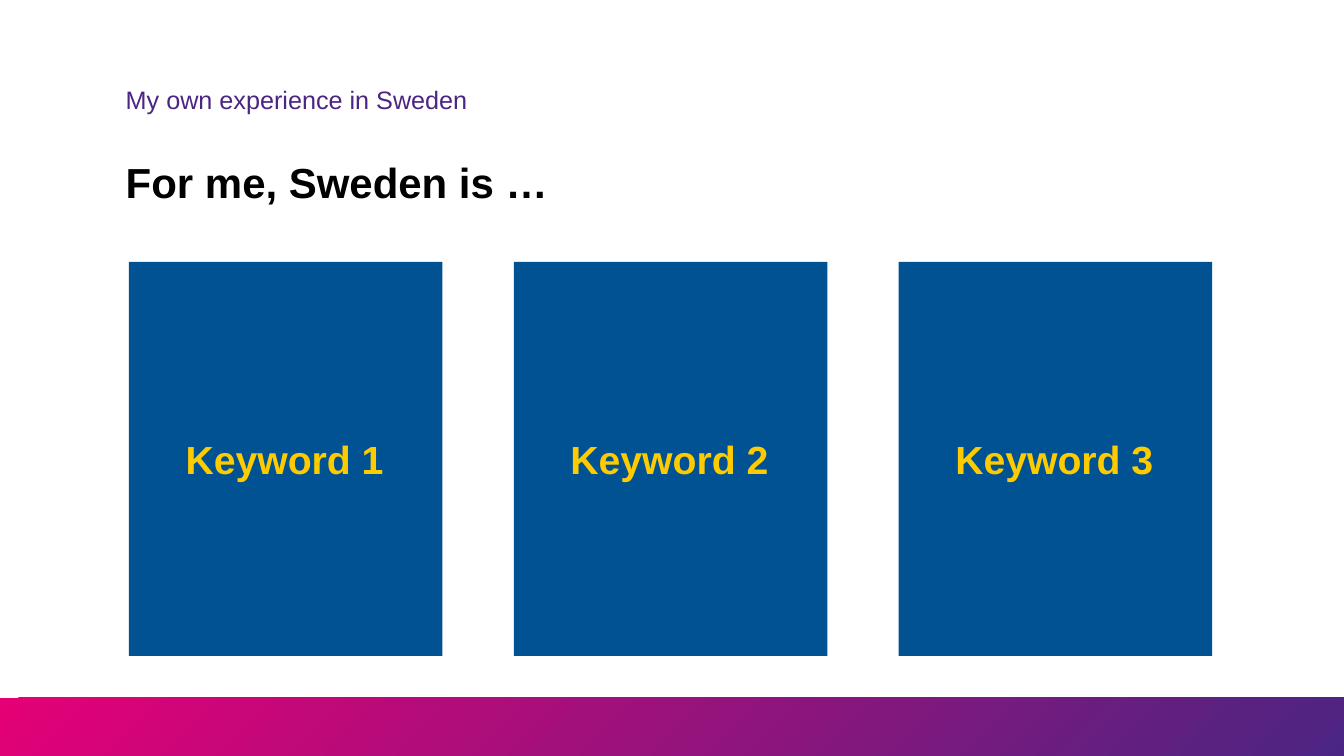
from pptx import Presentation
from pptx.dml.color import RGBColor
from pptx.enum.shapes import MSO_SHAPE
from pptx.enum.text import MSO_ANCHOR, PP_ALIGN
from pptx.util import Cm, Pt

PINK = RGBColor(0xE5, 0x00, 0x76)
PURPLE = RGBColor(0x4B, 0x25, 0x82)
BLUE = RGBColor(0x00, 0x52, 0x93)
YELLOW = RGBColor(0xFE, 0xCB, 0x00)
BLACK = RGBColor(0x00, 0x00, 0x00)


def add_text(shapes, text, left, top, width, height, *, size, color, bold=False,
             align=PP_ALIGN.LEFT, anchor=MSO_ANCHOR.TOP, spacing=1.0):
    """Add a wrapping text box holding one formatted paragraph."""
    box = shapes.add_textbox(left, top, width, height)
    frame = box.text_frame
    frame.word_wrap = True
    frame.vertical_anchor = anchor
    para = frame.paragraphs[0]
    para.alignment = align
    para.line_spacing = spacing
    span = para.add_run()
    span.text = text
    span.font.name = "Arial"
    span.font.size = Pt(size)
    span.font.bold = bold
    span.font.color.rgb = color


def add_rectangle(shapes, left, top, width, height):
    """Add a rectangle without outline or shadow and return it."""
    rectangle = shapes.add_shape(MSO_SHAPE.RECTANGLE, left, top, width, height)
    rectangle.shadow.inherit = False
    rectangle.line.fill.background()
    return rectangle


def add_footer_band(page, left, top, width, height):
    """Draw the diagonal gradient band at the foot of the page."""
    fill = add_rectangle(page.shapes, left, top, width, height).fill
    fill.gradient()
    fill.gradient_angle = 315
    for stop, color in zip(fill.gradient_stops, (PINK, PURPLE)):
        stop.color.rgb = color


def add_heading(page, left, top, width, topic, title):
    """Place the topic line and the title below it."""
    add_text(page.shapes, topic, left, top, width, Cm(1.55), size=18,
             color=PURPLE, anchor=MSO_ANCHOR.BOTTOM, spacing=0.9)
    add_text(page.shapes, title, left, top + Cm(1.75), width, Cm(2.9), size=30,
             color=BLACK, bold=True, anchor=MSO_ANCHOR.MIDDLE, spacing=0.9)


def add_keyword_card(page, left, top, width, height, keyword):
    """Group a blue card with its centred keyword."""
    shapes = page.shapes.add_group_shape().shapes
    card = add_rectangle(shapes, left, top, width, height)
    card.fill.solid()
    card.fill.fore_color.rgb = BLUE
    inset = Cm(0.45)
    add_text(shapes, keyword, left + inset - Cm(0.03), top + Cm(4.24),
             width - 2 * inset, Cm(2.18), size=28, color=YELLOW, bold=True,
             align=PP_ALIGN.CENTER)


def add_keyword_row(page, left, top, width, height, keywords):
    """Spread one card per keyword evenly over the row."""
    gap = Cm(1.8)
    card_width = (width - gap * (len(keywords) - 1)) // len(keywords)
    for index, keyword in enumerate(keywords):
        add_keyword_card(page, left + index * (card_width + gap), top,
                         card_width, height, keyword)


def main():
    """Build the keyword slide and save it."""
    deck = Presentation()
    deck.slide_width, deck.slide_height = Cm(33.87), Cm(19.05)
    page = deck.slides.add_slide(deck.slide_layouts[6])
    band_height = Cm(1.47)
    add_footer_band(page, 0, deck.slide_height - band_height,
                    deck.slide_width, band_height)
    add_heading(page, Cm(2.92), Cm(1.47), Cm(25),
                "My own experience in Sweden", "For me, Sweden is …")
    add_keyword_row(page, Cm(3.25), Cm(6.6), Cm(27.3), Cm(9.93),
                    ["Keyword 1", "Keyword 2", "Keyword 3"])
    deck.save("out.pptx")


if __name__ == "__main__":
    main()
